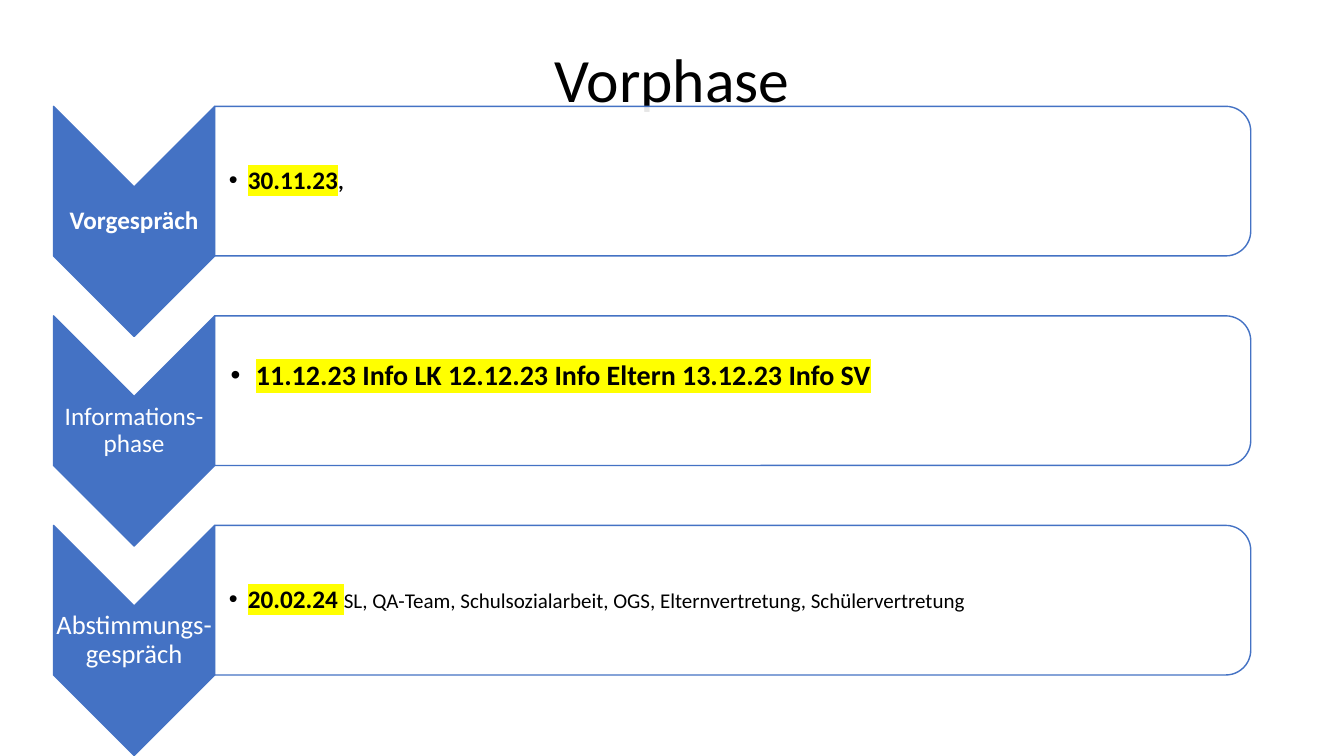
import pptx
import pptx.dml.color
import pptx.enum.shapes
import pptx.enum.text
import pptx.oxml.ns
import pptx.util
from lxml import etree

Cm, Pt = pptx.util.Cm, pptx.util.Pt
SHAPE = pptx.enum.shapes.MSO_SHAPE
ALIGN = pptx.enum.text.PP_ALIGN
MIDDLE = pptx.enum.text.MSO_ANCHOR.MIDDLE

FONT = "Calibri"
BLUE, WHITE, BLACK, YELLOW = "4472C4", "FFFFFF", "000000", "FFFF00"
LEFT, TOP, PITCH = 1.35, 2.68, 5.28
CHEVRON_W, CHEVRON_H = 4.06, 5.8
PANEL_W, PANEL_H = 26.11, 3.77

# Each phase: label, size, bold; panel left inset, bullet indent, bottom inset;
# runs of text, size, bold, highlighted
PHASES = [
    (("Vorgespräch", 18, True), (0.36, 0.48, 0.03),
     [("30.11.23", 18, True, True), (",", 16, True, False)]),
    (("Informations-phase", 18, False), (0.4, 0.64, 0.74),
     [("11.12.23 Info LK 12.12.23 Info Eltern 13.12.23 Info SV",
       20, True, True)]),
    (("Abstimmungs-gespräch", 19, False), (0.36, 0.48, 0.03),
     [("20.02.24 ", 18, True, True),
      ("SL, QA-Team, Schulsozialarbeit, OGS, Elternvertretung, "
       "Schülervertretung", 15, False, False)]),
]


def rgb(value):
    return pptx.dml.color.RGBColor.from_string(value)


def add_xml(parent, tag, **attrs):
    return etree.SubElement(parent, pptx.oxml.ns.qn(tag), attrs)


def style_paragraph(p, color, align=None):
    p.line_spacing = 0.9
    p.alignment = align
    p.font.name = FONT
    p.font.color.rgb = rgb(color)


def add_rotated(s, kind, x, y, w, h, fill):
    """Place a shape turned by 90 degrees so that it covers the given box."""
    sp = s.shapes.add_shape(kind, Cm(x + (w - h) / 2), Cm(y + (h - w) / 2),
                            Cm(h), Cm(w))
    sp.rotation = 90
    sp.shadow.inherit = False
    sp.fill.solid()
    sp.fill.fore_color.rgb = rgb(fill)
    sp.line.color.rgb = rgb(BLUE)
    sp.line.width = Pt(1)
    return sp


def add_text(s, x, y, w, h, left=0.03, bottom=0.03):
    tf = s.shapes.add_textbox(Cm(x), Cm(y), Cm(w), Cm(h)).text_frame
    tf.word_wrap = True
    tf.vertical_anchor = MIDDLE
    tf.margin_left, tf.margin_bottom = Cm(left), Cm(bottom)
    tf.margin_top = tf.margin_right = Cm(0.03)
    return tf.paragraphs[0]


def add_title(s, x, y, w, h):
    sp = s.shapes.title
    sp.left, sp.top, sp.width, sp.height = Cm(x), Cm(y), Cm(w), Cm(h)
    tf = sp.text_frame
    tf.text = "Vorphase"
    tf.vertical_anchor = MIDDLE
    p = tf.paragraphs[0]
    style_paragraph(p, BLACK, ALIGN.CENTER)
    p.font.size = Pt(44)


def add_chevron(s, x, y, w, h, label, size, bold):
    add_rotated(s, SHAPE.CHEVRON, x, y, w, h, BLUE)
    # The label sits between the notch and the point
    p = add_text(s, x, y + w / 2, w, h - w)
    p.text = label
    style_paragraph(p, WHITE, ALIGN.CENTER)
    p.font.size = Pt(size)
    p.font.bold = bold


def add_panel(s, x, y, w, h, inset, indent, bottom, runs):
    sp = add_rotated(s, SHAPE.ROUND_2_SAME_RECTANGLE, x, y, w, h, WHITE)
    color = sp.fill._xPr.find(".//" + pptx.oxml.ns.qn("a:srgbClr"))
    add_xml(color, "a:alpha", val="90000")
    # Bulleted dates
    p = add_text(s, x, y + 0.18, w - 0.18, h - 0.36, inset, bottom)
    pPr = p._p.get_or_add_pPr()
    pPr.set("marL", str(Cm(indent)))
    pPr.set("indent", str(-Cm(indent)))
    add_xml(pPr, "a:buFont", typeface="Arial")
    add_xml(pPr, "a:buChar", char="•")
    style_paragraph(p, BLACK)
    for text, size, bold, marked in runs:
        r = p.add_run()
        r.text = text
        r.font.size = Pt(size)
        r.font.bold = bold
        if marked:
            mark = add_xml(r._r.get_or_add_rPr(), "a:highlight")
            add_xml(mark, "a:srgbClr", val=YELLOW)


def add_phase(s, x, y, label, panel, runs):
    add_chevron(s, x, y, CHEVRON_W, CHEVRON_H, *label)
    add_panel(s, x + CHEVRON_W, y, PANEL_W, PANEL_H, *panel, runs)


def main():
    prs = pptx.Presentation()
    prs.slide_width, prs.slide_height = Cm(33.87), Cm(19.05)
    s = prs.slides.add_slide(prs.slide_layouts[5])
    add_title(s, 2.33, 0.23, 29.21, 3.68)
    for i, phase in enumerate(PHASES):
        add_phase(s, LEFT, TOP + i * PITCH, *phase)
    prs.save("out.pptx")


if __name__ == "__main__":
    main()
